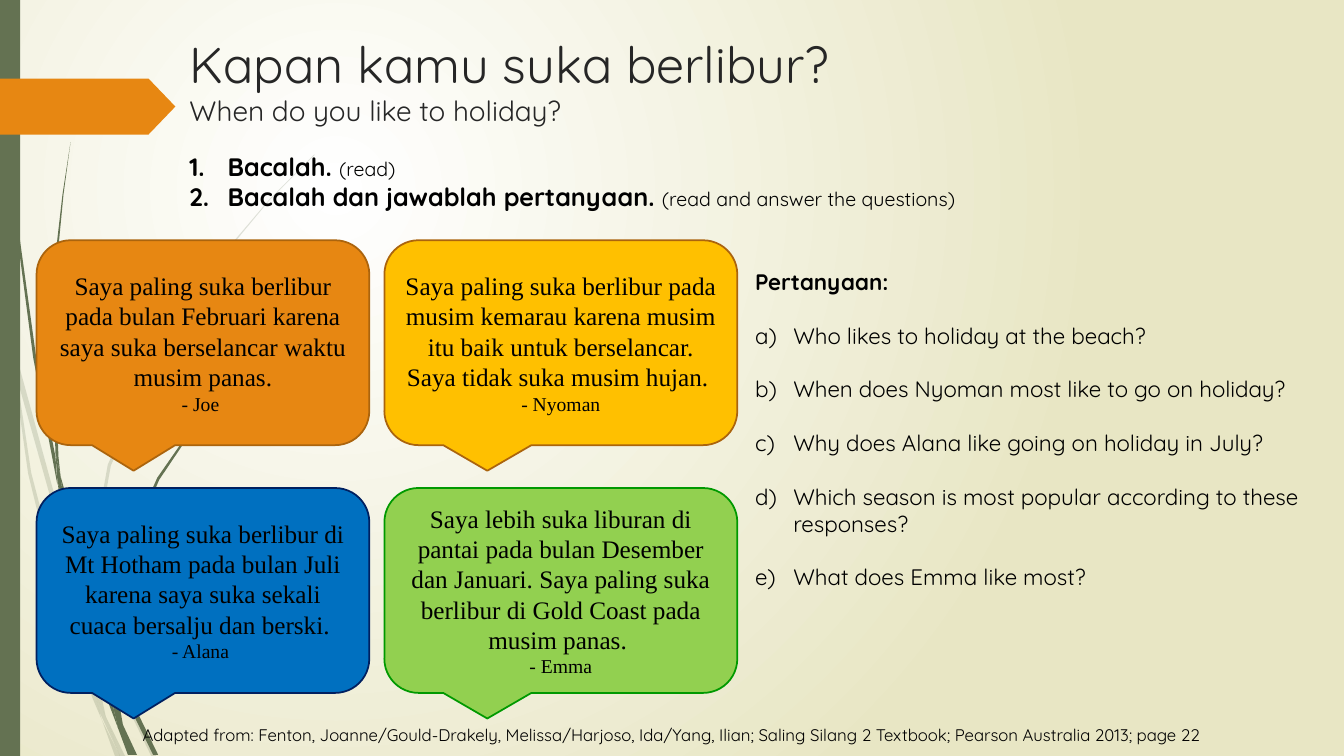
from lxml import etree
from pptx import Presentation, util as u
from pptx.dml.color import RGBColor
from pptx.enum import shapes, text
from pptx.oxml import ns

WIDTH, HEIGHT = u.Inches(40 / 3), u.Inches(7.5)
SAGE, ORANGE, BLACK = "647252", "E78712", "000000"
SANS, SERIF = "Quicksand", "Times New Roman"

# Outlines of the grass blades, in inches
PALE_BLADES = [
    [(.11, 3.5), (.09, 3.22), (0, 2.82), (0, 2.99), (.1, 3.44)],
    [(.58, 5.22), (.84, 5.99), (.85, 5.86), (.62, 5.2), (.14, 3.45), (.17, 3.76)],
    [(.92, 6.07), (.88, 5.96), (.88, 6.1), (1.23, 6.94), (1.5, 7.5), (1.55, 7.5), (1.27, 6.92)],
    [(1.19, 7.5), (1.24, 7.5), (1.05, 7.11)],
    [(.93, 6.83), (.7, 6.19), (.31, 4.69), (.17, 3.76), (.11, 3.5), (.28, 4.7), (.65, 6.21),
     (.92, 6.93), (1.01, 7.14), (.99, 7.07)],
    [(.84, 5.99), (.87, 6.46), (.93, 6.83), (.96, 6.92), (1.05, 7.11), (.91, 6.46), (.88, 6.08)],
    [(.88, 5.84), (1.1, 4.62), (1.6, 3.49), (2.29, 2.45), (2.68, 1.98), (3.12, 1.54), (3.12, 1.53),
     (2.68, 1.97), (2.28, 2.44), (1.58, 3.48), (1.07, 4.61), (.85, 5.84), (.88, 5.96)],
    [(1.01, 7.14), (1.14, 7.5), (1.19, 7.5)],
    [(.96, 6.92), (.93, 6.83), (.99, 7.07), (1.19, 7.5), (1.05, 7.11)],
]
DARK_BLADES = [
    [(.07, 1.1), (.17, 2.33), (.33, 3.55), (.57, 4.81), (.55, 4.53), (.36, 3.55), (.19, 2.32),
     (.08, 1.09), (.04, 0), (.03, 0)],
    [(.88, 5.92), (1.06, 6.45), (1.06, 6.31), (.93, 5.9), (.6, 4.72), (.64, 5.05)],
    [(1.13, 6.49), (1.1, 6.41), (1.11, 6.56), (1.32, 7.08), (1.52, 7.49), (1.57, 7.49), (1.36, 7.06)],
    [(1.1, 6.91), (.98, 6.57), (.72, 5.56), (.64, 5.05), (.57, 4.77), (.68, 5.57), (.93, 6.59),
     (1.17, 7.22)],
    [(.6, 4.72), (.58, 4.53), (.54, 3.49), (.58, 2.45), (.63, 1.93), (.7, 1.41), (.62, 1.93),
     (.56, 2.45), (.52, 3.49), (.55, 4.49)],
    [(.57, 4.77), (.64, 5.05), (.6, 4.72), (.55, 4.49)],
    [(1.11, 6.33), (1.25, 5.52), (1.58, 4.76), (2.05, 4.06), (2.31, 3.74), (2.61, 3.44), (2.6, 3.44),
     (2.31, 3.73), (2.04, 4.05), (1.56, 4.74), (1.22, 5.51), (1.06, 6.31), (1.1, 6.41)],
    [(1.17, 7.22), (1.27, 7.49), (1.36, 7.49), (1.22, 7.19), (1.11, 6.56), (1.06, 6.45), (1.1, 6.91)],
]

# Callout grid: left and width of columns, top of rows, in percent of the slide
COLUMNS = [(2.72, 24.76), (28.6, 26.26)]
ROWS, CALLOUT_HEIGHT = [31.78, 64.55], 27.1
CALLOUTS = [
    (0, 0, ORANGE, "AB640D", "Joe ",
     "Saya paling suka berlibur pada bulan Februari karena saya suka berselancar waktu musim panas."),
    (0, 1, "0070C0", "002060", "Alana ",
     "Saya paling suka berlibur di Mt Hotham pada bulan Juli karena saya suka sekali cuaca "
     "bersalju dan berski. "),
    (1, 0, "FFC000", "AB640D", "Nyoman",
     "Saya paling suka berlibur pada musim kemarau karena musim itu baik untuk berselancar. "
     "Saya tidak suka musim hujan. "),
    (1, 1, "92D050", "009900", "Emma",
     "Saya lebih suka liburan di pantai pada bulan Desember dan Januari. Saya paling suka "
     "berlibur di Gold Coast pada musim panas. "),
]
TASKS = [("Bacalah. ", "(read)"),
         ("Bacalah dan jawablah pertanyaan. ", "(read and answer the questions)")]
QUESTIONS = [
    "Who likes to holiday at the beach?",
    "When does Nyoman most like to go on holiday?",
    "Why does Alana like going on holiday in July?",
    "Which season is most popular according to these responses?",
    "What does Emma like most?",
]
CREDIT = ("Adapted from: Fenton, Joanne/Gould-Drakely, Melissa/Harjoso, Ida/Yang, Ilian; "
          "Saling Silang 2 Textbook; Pearson Australia 2013; page 22")


def rgb(color):
    return RGBColor.from_string(color)


def area(left, top, width, height):
    """Turn percentages of the slide into lengths."""
    return [int(full * share / 100) for full, share in
            zip((WIDTH, HEIGHT) * 2, (left, top, width, height))]


def paint(sp, fill, line=None):
    sp.shadow.inherit = False
    sp.fill.solid()
    sp.fill.fore_color.rgb = rgb(fill)
    if line:
        sp.line.color.rgb = rgb(line)
        sp.line.width = u.Pt(1.25)
    else:
        sp.line.fill.background()


def add_background(s):
    """Fill the slide with a circular gradient."""
    fill = s.background.fill
    fill.gradient()
    for stop, color in zip(fill.gradient_stops, ("FFFFFF", "E8E6C4")):
        stop.color.rgb = rgb(color)
    grad = s._element.find(".//" + ns.qn("a:gradFill"))
    grad.remove(grad.find(ns.qn("a:lin")))
    circle = etree.SubElement(grad, ns.qn("a:path"), {"path": "circle"})
    etree.SubElement(circle, ns.qn("a:fillToRect"), l="50000", t="50000", r="100000", b="100000")


def add_blade(s, outline, opacity):
    """Draw a blade; the builder keeps whole units only, so it works in hundredths of an inch."""
    points = [(round(x * 100), round(y * 100)) for x, y in outline]
    builder = s.shapes.build_freeform(*points[0], scale=u.Inches(.01))
    builder.add_line_segments(points[1:], close=True)
    sp = builder.convert_to_shape()
    paint(sp, SAGE)
    if opacity < 100:
        color = sp._element.spPr.find(".//" + ns.qn("a:srgbClr"))
        etree.SubElement(color, ns.qn("a:alpha"), val=str(opacity * 1000))


def add_shape(s, kind, place, fill, line=None):
    sp = s.shapes.add_shape(kind, *area(*place))
    paint(sp, fill, line)
    return sp


def add_run(p, words, size, name=SANS, color=BLACK, bold=False):
    r = p.add_run()
    r.text = words
    for key, value in {"size": u.Pt(size), "name": name, "bold": bold}.items():
        setattr(r.font, key, value)
    r.font.color.rgb = rgb(color)


def add_text_box(s, place):
    tf = s.shapes.add_textbox(*area(*place)).text_frame
    tf.word_wrap = True
    return tf


def number(p, scheme):
    """Give the paragraph an automatic number with a hanging indent."""
    pPr = p._p.get_or_add_pPr()
    pPr.set("marL", str(u.Inches(.38)))
    pPr.set("indent", str(-u.Inches(.38)))
    etree.SubElement(pPr, ns.qn("a:buFont"), typeface="+mj-lt")
    etree.SubElement(pPr, ns.qn("a:buAutoNum"), type=scheme)


def add_title(s):
    sp = s.shapes.title
    sp.left, sp.top, sp.width, sp.height = area(13.35, 3.7, 73.14, 15.73)
    tf = sp.text_frame
    for key, value in {"word_wrap": True, "auto_size": text.MSO_AUTO_SIZE.NONE,
                       "vertical_anchor": text.MSO_ANCHOR.TOP}.items():
        setattr(tf, key, value)
    p = tf.paragraphs[0]
    p.alignment = text.PP_ALIGN.LEFT
    add_run(p, "Kapan kamu suka berlibur?", 36, color="262626")
    p.add_line_break()
    add_run(p, "When do you like to holiday?", 20, color="262626")


def add_callout(s, column, row, fill, line, speaker, speech):
    left, width = COLUMNS[column]
    sp = add_shape(s, shapes.MSO_SHAPE.ROUNDED_RECTANGULAR_CALLOUT,
                   (left, ROWS[row], width, CALLOUT_HEIGHT), fill, line)
    tf = sp.text_frame
    tf.word_wrap = True
    tf.vertical_anchor = text.MSO_ANCHOR.MIDDLE
    for p, words, size in ((tf.paragraphs[0], speech, 18), (tf.add_paragraph(), "- " + speaker, 14)):
        p.alignment = text.PP_ALIGN.CENTER
        add_run(p, words, size, SERIF)


def add_tasks(s):
    tf = add_text_box(s, (13.35, 19.38, 63.32, 9.47))
    for i, (task, gloss) in enumerate(TASKS):
        p = tf.add_paragraph() if i else tf.paragraphs[0]
        number(p, "arabicPeriod")
        add_run(p, task, 18, bold=True)
        add_run(p, gloss, 14)


def add_questions(s):
    tf = add_text_box(s, (55.44, 34.8, 44.26, 52))
    add_run(tf.paragraphs[0], "Pertanyaan:", 16, bold=True)
    for question in QUESTIONS:
        p = tf.add_paragraph()
        p.space_before = u.Pt(19.2)
        number(p, "alphaLcParenR")
        add_run(p, question, 16)


def main():
    prs = Presentation()
    prs.slide_width, prs.slide_height = WIDTH, HEIGHT
    s = prs.slides.add_slide(prs.slide_layouts[5])
    add_background(s)
    for blades, opacity in ((PALE_BLADES, 20), (DARK_BLADES, 100)):
        for outline in blades:
            add_blade(s, outline, opacity)
    add_shape(s, shapes.MSO_SHAPE.RECTANGLE, (0, 0, 1.5, 100), SAGE)
    arrow = add_shape(s, shapes.MSO_SHAPE.PENTAGON, (0, 10.4, 13.05, 7.4), ORANGE)
    arrow.adjustments[0] = .48
    add_title(s)
    add_tasks(s)
    for callout in CALLOUTS:
        add_callout(s, *callout)
    add_questions(s)
    p = add_text_box(s, (0, 95.2, 100, 4)).paragraphs[0]
    p.alignment = text.PP_ALIGN.CENTER
    add_run(p, CREDIT, 12)
    prs.save("out.pptx")


if __name__ == "__main__":
    main()
